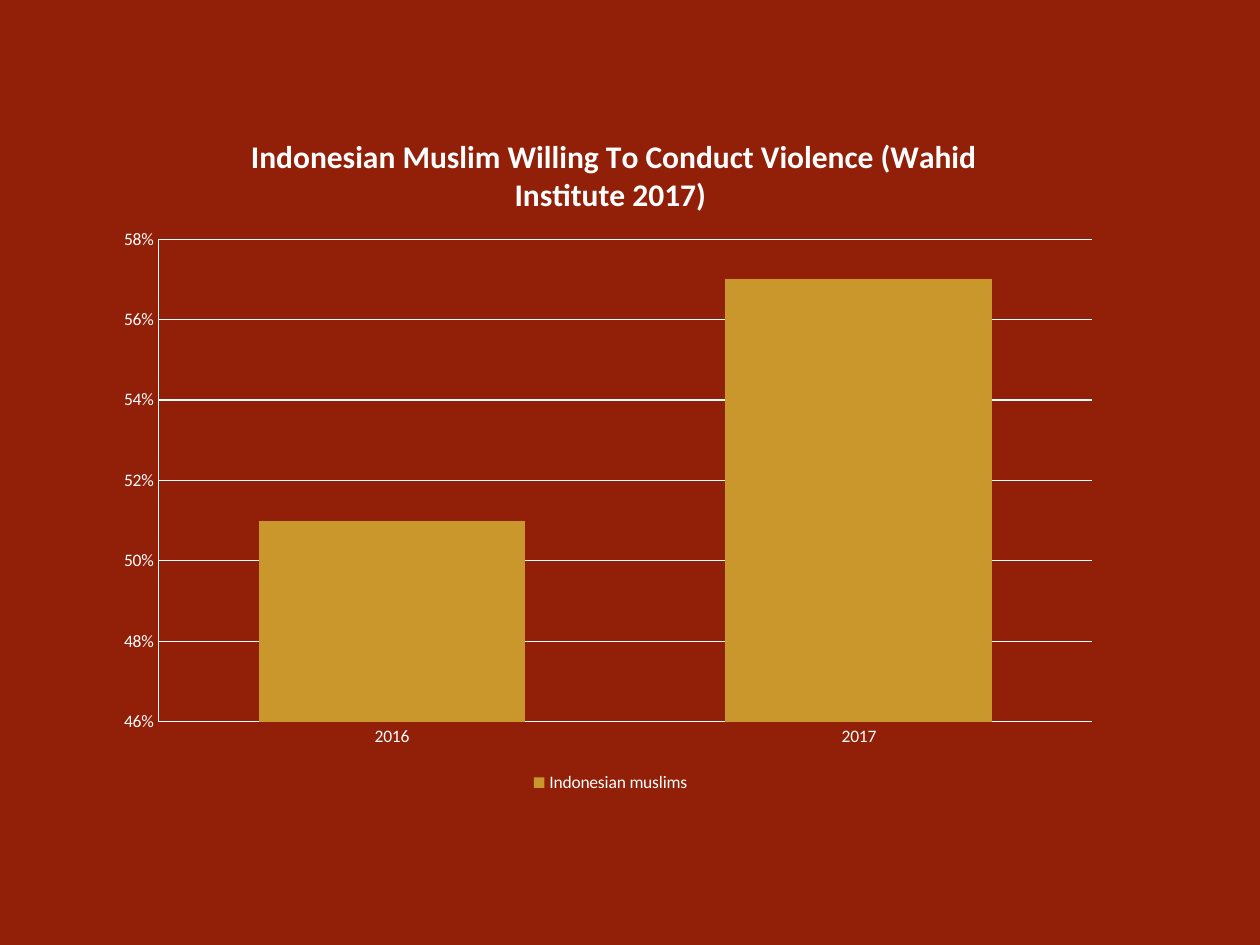
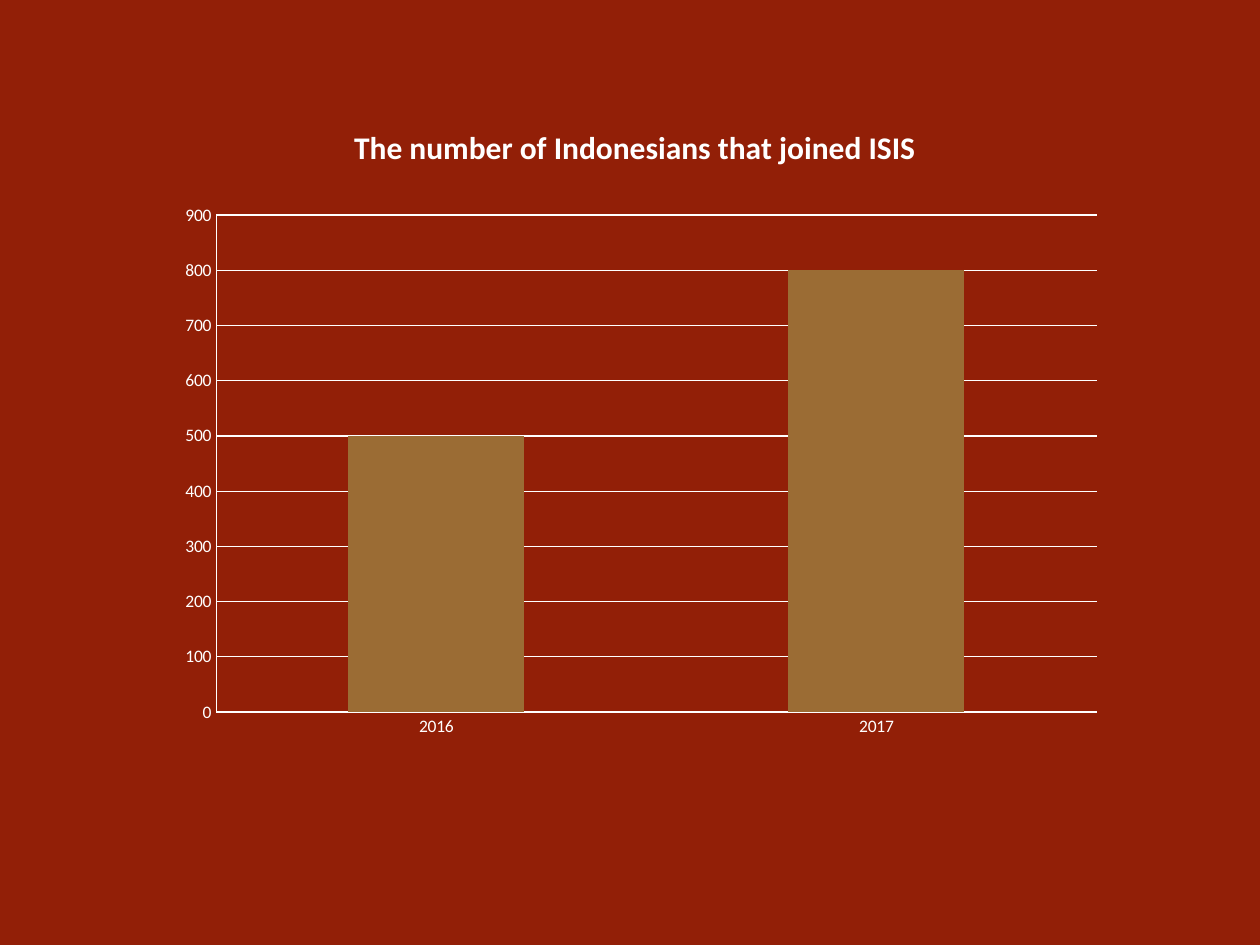
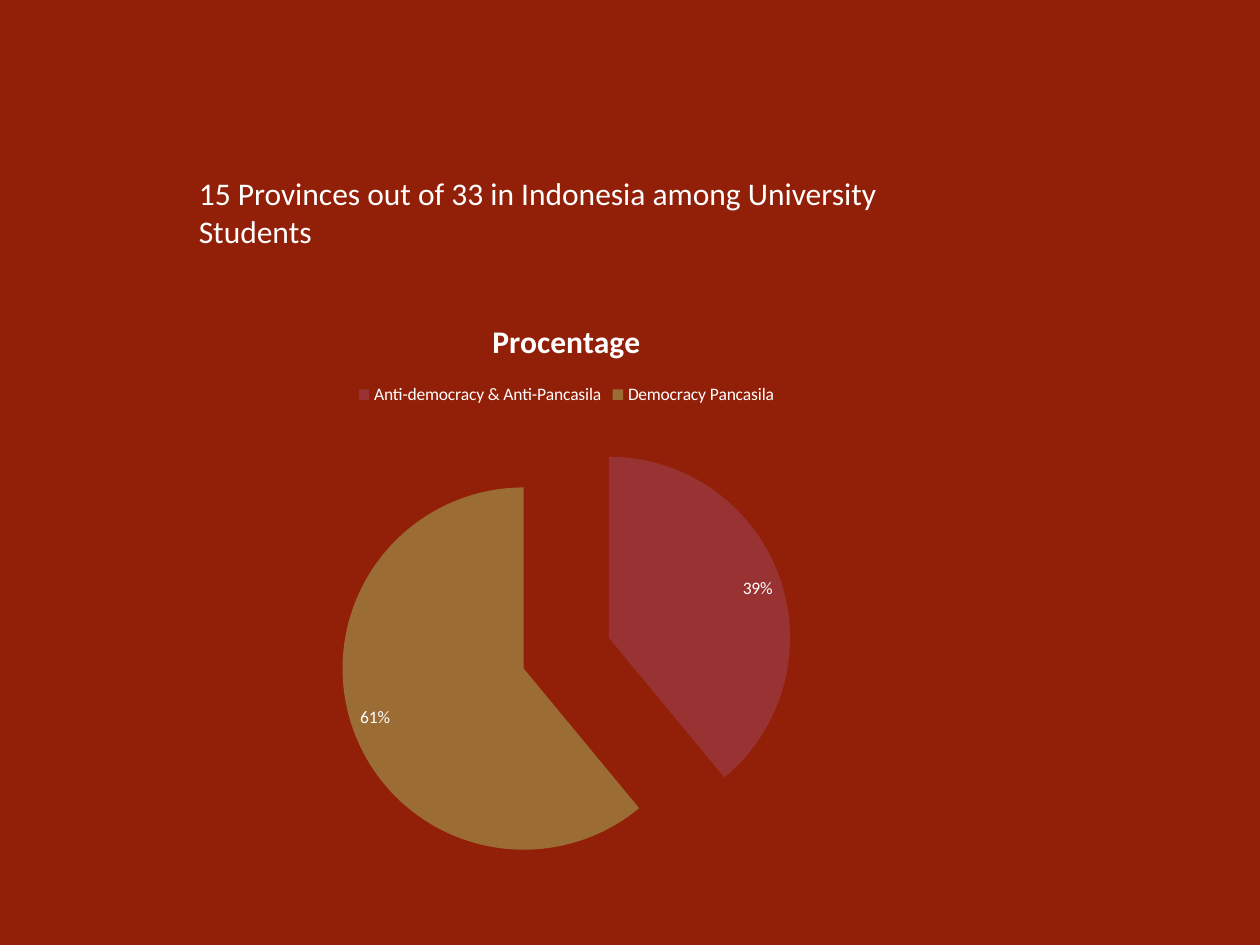
"""Build three slides of survey charts about Indonesia."""
import pptx
import pptx.chart.data
import pptx.dml.color
import pptx.enum.chart
import pptx.enum.text
import pptx.oxml
import pptx.oxml.ns
import pptx.util

RED = pptx.dml.color.RGBColor(0x92, 0x1F, 0x07)
WHITE = pptx.dml.color.RGBColor(0xFF, 0xFF, 0xFF)
GOLD = pptx.dml.color.RGBColor(0xC9, 0x97, 0x2B)
BRONZE = pptx.dml.color.RGBColor(0x9B, 0x6C, 0x34)
WINE = pptx.dml.color.RGBColor(0x99, 0x32, 0x32)

COLUMNS, ROWS = 100, 75
YEARS = ("2016", "2017")
CHART_NS = pptx.oxml.ns.nsdecls("c")


class Deck:
    """Hold the shared style and the slide being built."""

    font = "Calibri"
    heading_size = pptx.util.Pt(18)
    label_size = pptx.util.Pt(10)
    line_width = pptx.util.Pt(0.75)

    def __init__(self):
        """Open a presentation with a red master."""
        self.show = pptx.Presentation()
        self.show.slide_width = pptx.util.Inches(10)
        self.show.slide_height = pptx.util.Inches(7.5)
        background = self.show.slide_master.background.fill
        background.solid()
        background.fore_color.rgb = RED
        self.slide = None

    def new_slide(self):
        """Start a blank slide."""
        self.slide = self.show.slides.add_slide(self.show.slide_layouts[6])

    def place(self, column, row, columns, rows):
        """Turn grid cells into slide lengths."""
        across = self.show.slide_width / COLUMNS
        down = self.show.slide_height / ROWS
        return (round(column * across), round(row * down),
                round(columns * across), round(rows * down))

    def style(self, font, size, bold=False):
        """Apply the shared white lettering."""
        font.name, font.size, font.bold = self.font, size, bold
        font.color.rgb = WHITE

    def text(self, wording, *cells):
        """Add a wrapped line of heading text."""
        box = self.slide.shapes.add_textbox(*self.place(*cells))
        box.text_frame.word_wrap = True
        box.text_frame.auto_size = pptx.enum.text.MSO_AUTO_SIZE.SHAPE_TO_FIT_TEXT
        run = box.text_frame.paragraphs[0].add_run()
        run.text = wording
        self.style(run.font, self.heading_size)

    def chart(self, kind, title, series_name, categories, values, cells, legend=None):
        """Add a chart with its title and optional legend."""
        data = pptx.chart.data.CategoryChartData()
        data.categories = categories
        data.add_series(series_name, values)
        chart = self.slide.shapes.add_chart(kind, *self.place(*cells), data).chart
        self.style(chart.font, self.label_size)
        chart.has_title = True
        heading = chart.chart_title.text_frame.paragraphs[0].add_run()
        heading.text = title
        self.style(heading.font, self.heading_size, bold=True)
        chart.chart_title.include_in_layout = False
        chart.has_legend = legend is not None
        if legend is not None:
            chart.legend.position = legend
            chart.legend.include_in_layout = False
        return chart

    def columns(self, title, series_name, values, cells, color, gap, plot_area,
                scale, number_format, legend=None):
        """Add a yearly column chart with white axes and grid."""
        chart = self.chart(pptx.enum.chart.XL_CHART_TYPE.COLUMN_CLUSTERED, title,
                           series_name, YEARS, values, cells, legend)
        plot = chart.plots[0]
        plot.gap_width, plot.vary_by_categories = gap, False
        bars = plot.series[0].format.fill
        bars.solid()
        bars.fore_color.rgb = color
        value_axis = chart.value_axis
        value_axis.minimum_scale, value_axis.maximum_scale, value_axis.major_unit = scale
        value_axis.tick_labels.number_format = number_format
        value_axis.tick_labels.number_format_is_linked = False
        for axis in (chart.category_axis, value_axis):
            axis.major_tick_mark = pptx.enum.chart.XL_TICK_MARK.NONE
            self.rule(axis.format.line)
        self.rule(value_axis.major_gridlines.format.line)
        self.fix_plot(plot, plot_area)

    def rule(self, line):
        """Draw a chart line in thin white."""
        line.color.rgb = WHITE
        line.width = self.line_width

    def fix_plot(self, plot, plot_area):
        """Set the inner plot area as shares of the chart."""
        area = plot._element.getparent()
        for old in area.findall(pptx.oxml.ns.qn("c:layout")):
            area.remove(old)
        modes = '<c:xMode val="edge"/><c:yMode val="edge"/>'
        shares = "".join(f'<c:{side} val="{share}"/>' for side, share in zip("xywh", plot_area))
        area.insert(0, pptx.oxml.parse_xml(
            f'<c:layout {CHART_NS}><c:manualLayout><c:layoutTarget val="inner"/>'
            f"{modes}{shares}</c:manualLayout></c:layout>"))

    def pie(self, title, slices, cells, explosion):
        """Add an exploded pie from (name, value, color) slices."""
        names, values, colors = zip(*slices)
        chart = self.chart(pptx.enum.chart.XL_CHART_TYPE.PIE, title, title, names, values,
                           cells, pptx.enum.chart.XL_LEGEND_POSITION.TOP)
        plot = chart.plots[0]
        plot.vary_by_categories = True
        series = plot.series[0]
        series._element.find(pptx.oxml.ns.qn("c:tx")).addnext(
            pptx.oxml.parse_xml(f'<c:explosion {CHART_NS} val="{explosion}"/>'))
        for index, color in enumerate(colors):
            piece = series.points[index].format.fill
            piece.solid()
            piece.fore_color.rgb = color
        labels = series.data_labels
        labels.show_percentage, labels.show_value = True, False
        labels.number_format, labels.number_format_is_linked = "0%", False
        labels.position = pptx.enum.chart.XL_LABEL_POSITION.INSIDE_END
        self.style(labels.font, self.label_size)


def main():
    """Build and save the slides."""
    deck = Deck()

    deck.new_slide()
    deck.columns(" Indonesian Muslim Willing To Conduct Violence (Wahid Institute 2017)",
                 "Indonesian muslims", (0.51, 0.57), (8.6, 8.6, 79.7, 54.7), GOLD, 75,
                 (0.05, 0.19, 0.93, 0.7), (0.46, 0.58, 0.02), "0%",
                 pptx.enum.chart.XL_LEGEND_POSITION.BOTTOM)

    deck.new_slide()
    joined = "The number of Indonesians that joined ISIS"
    deck.columns(joined, joined, (500, 800), (7.8, 7.8, 85.2, 58), BRONZE, 150,
                 (0.11, 0.16, 0.82, 0.68), (0, 900, 100), "General")

    deck.new_slide()
    deck.pie("Procentage",
             (("Anti-democracy & Anti-Pancasila", 39, WINE), ("Democracy Pancasila", 61, BRONZE)),
             (4.7, 23.4, 80.5, 47.8), explosion=25)
    deck.text("15 Provinces out of 33 in Indonesia among University Students",
              14.8, 13.3, 63.3, 7.1)

    deck.show.save("out.pptx")


if __name__ == "__main__":
    main()
